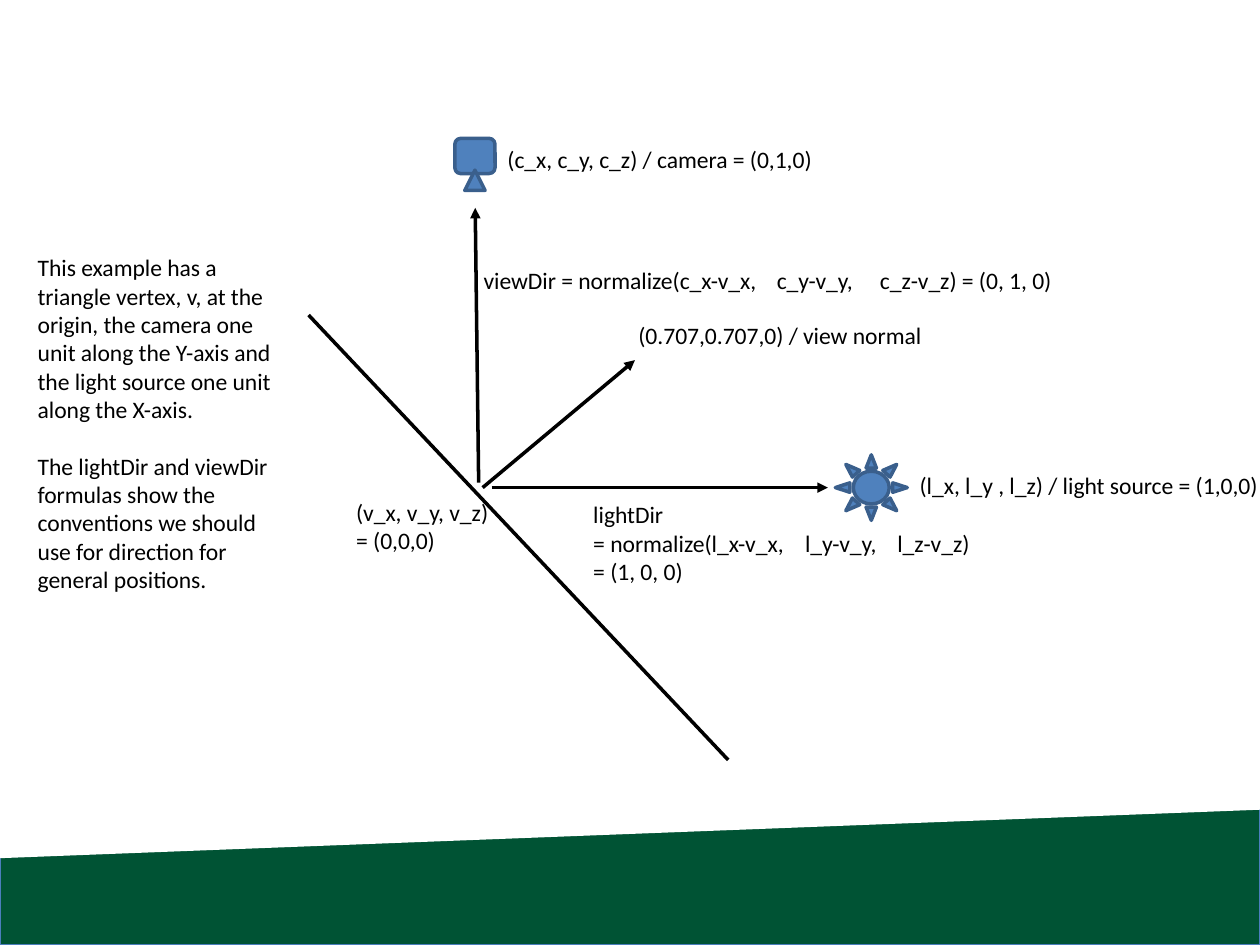
from lxml import etree
from pptx import Presentation
from pptx import util as u
from pptx.dml.color import RGBColor
from pptx.enum import shapes, text
from pptx.oxml.ns import qn

BLACK, WHITE, GREEN, BLUE, NAVY = "000000", "FFFFFF", "005334", "4F81BD", "3A5F8C"
SHAPE = shapes.MSO_SHAPE


def color(value):
    """Return the colour of a hex string."""
    return RGBColor.from_string(value)


def add_shape(s, kind, box, fill=BLUE, line=NAVY, width=2):
    """Add a flat preset shape; box is left, top, width, height in cm."""
    sp = s.shapes.add_shape(kind, *map(u.Cm, box))
    sp.shadow.inherit = False
    sp.fill.solid()
    sp.fill.fore_color.rgb = color(fill)
    if line:
        sp.line.color.rgb = color(line)
        sp.line.width = u.Pt(width)
    else:
        sp.line.fill.background()
    return sp


def add_text(s, content, box, size=13.5, font="Calibri", fill=BLACK, wrap=False, gap=0, tabs=()):
    """Add a text box with one paragraph per line; gap in points, tabs in cm."""
    tf = s.shapes.add_textbox(*map(u.Cm, box)).text_frame
    tf.word_wrap = wrap
    tf.auto_size = text.MSO_AUTO_SIZE.SHAPE_TO_FIT_TEXT
    for i, line in enumerate(content.split("\n")):
        p = tf.paragraphs[0] if i == 0 else tf.add_paragraph()
        if tabs:
            stops = etree.SubElement(p._p.get_or_add_pPr(), qn("a:tabLst"))
            for pos in tabs:
                etree.SubElement(stops, qn("a:tab"), pos=str(u.Cm(pos)), algn="l")
        if i and gap:
            p.space_before = u.Pt(gap)
        r = p.add_run()
        r.text = line
        r.font.size, r.font.name = u.Pt(size), font
        r.font.color.rgb = color(fill)


def add_line(s, x1, y1, x2, y2, arrow=True):
    """Draw a straight black line, with an arrowhead at its end if asked."""
    c = s.shapes.add_connector(shapes.MSO_CONNECTOR.STRAIGHT, *map(u.Cm, (x1, y1, x2, y2)))
    c.line.color.rgb = color(BLACK)
    c.line.width = u.Pt(2)
    if arrow:
        etree.SubElement(c.line._get_or_add_ln(), qn("a:tailEnd"), type="triangle")
    etree.SubElement(c._element.spPr, qn("a:effectLst"))


def footer_band(s, x, y, w, h):
    """Draw the green band whose top is cut by a slanted white shape."""
    add_shape(s, SHAPE.RECTANGLE, (x, y, w, h), GREEN, "4B7EBC", 0.75)
    cut, bottom = 5.89, y + 3.05
    sp = add_shape(s, SHAPE.PARALLELOGRAM,
                   (x + (w - cut) / 2, bottom - (cut + w) / 2, cut, w), WHITE, None)
    sp.adjustments[0] = 0.166
    sp.rotation = 90
    sp._element.spPr.find(qn("a:xfrm")).set("flipH", "1")


def vectors(s, x, y, w, h):
    """Draw the surface across the box and the three directions from the vertex."""
    add_line(s, x + w, y + h, x, y, arrow=False)
    vx, vy = x + 3.48, y + 3.48
    add_line(s, vx - 0.05, vy - 0.1, vx - 0.12, vy - 5.64)
    add_line(s, vx + 0.21, vy, vx + 6.99, vy)
    add_line(s, vx + 0.03, vy, vx + 3.1, vy - 2.57)
    add_text(s, "(v_x, v_y, v_z)\n= (0,0,0)", (vx - 2.77, vy + 0.08, 3.23, 1.42))
    add_text(s, "(0.707,0.707,0) / view normal", (vx + 2.92, y, 6.32, 0.84))
    add_text(s, "viewDir = normalize(c_x-v_x,\tc_y-v_y,\tc_z-v_z) = (0, 1, 0)",
             (vx - 0.2, vy - 4.6, 12.14, 0.84), wrap=True, tabs=(5.91, 7.99))
    add_text(s, "lightDir\n= normalize(l_x-v_x,\tl_y-v_y,\tl_z-v_z)\n= (1, 0, 0)",
             (vx + 2.01, vy + 0.13, 8.23, 1.98), wrap=True, tabs=(4.27, 6.13))


def camera(s, x, y, w, h):
    """Draw the camera and its label to the right."""
    foot = 0.41
    add_shape(s, SHAPE.ROUNDED_RECTANGLE, (x, y, w, 0.71))
    add_shape(s, SHAPE.ISOSCELES_TRIANGLE, (x + (w - foot) / 2, y + h - foot, foot, foot))
    add_text(s, "(c_x, c_y, c_z) / camera = (0,1,0)", (x + w, y, 6.76, 0.84))


def light_source(s, x, y, w, h):
    """Draw the light source and its label to the right."""
    add_shape(s, SHAPE.SUN, (x, y, w, h))
    add_text(s, "(l_x, l_y , l_z) / light source = (1,0,0)", (x + w, y + 0.2, 7.44, 0.84))


def explanation(s, x, y, w, h):
    """Write the explanation beside the diagram."""
    add_text(s, "This example has a triangle vertex, v, at the origin, the camera one unit "
                "along the Y-axis and the light source one unit along the X-axis.\n"
                "The lightDir and viewDir formulas show the conventions we should use for "
                "direction for general positions.", (x, y, w, h), wrap=True, gap=16.2)


def main():
    """Build and save the slide."""
    prs = Presentation()
    prs.slide_width, prs.slide_height = u.Cm(25.4), u.Cm(19.05)
    s = prs.slides.add_slide(prs.slide_layouts[6])
    footer_band(s, 0, 14.25, 25.4, 4.8)
    vectors(s, 6.22, 6.35, 8.46, 8.97)
    camera(s, 9.17, 2.79, 0.81, 1.05)
    light_source(s, 16.84, 9.17, 1.45, 1.32)
    explanation(s, 0.51, 4.98, 5.26, 7.19)
    prs.save("out.pptx")


if __name__ == "__main__":
    main()
